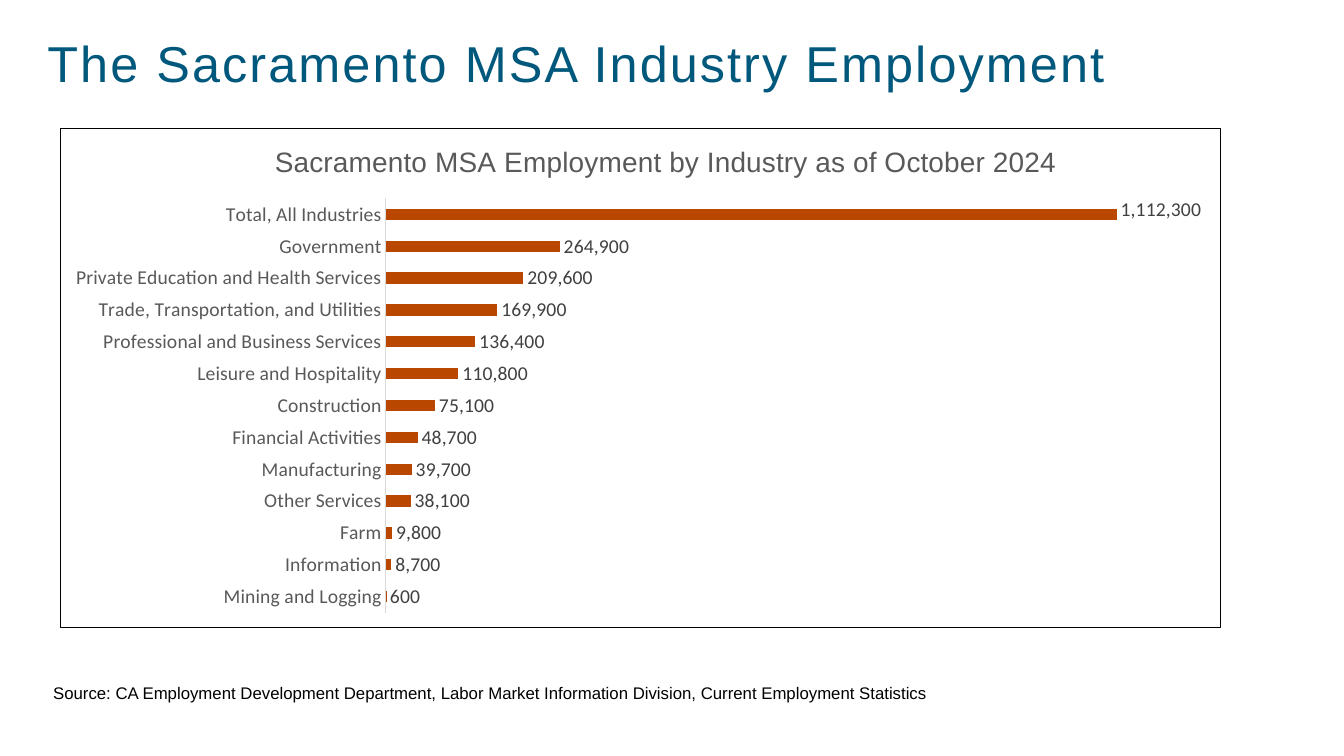
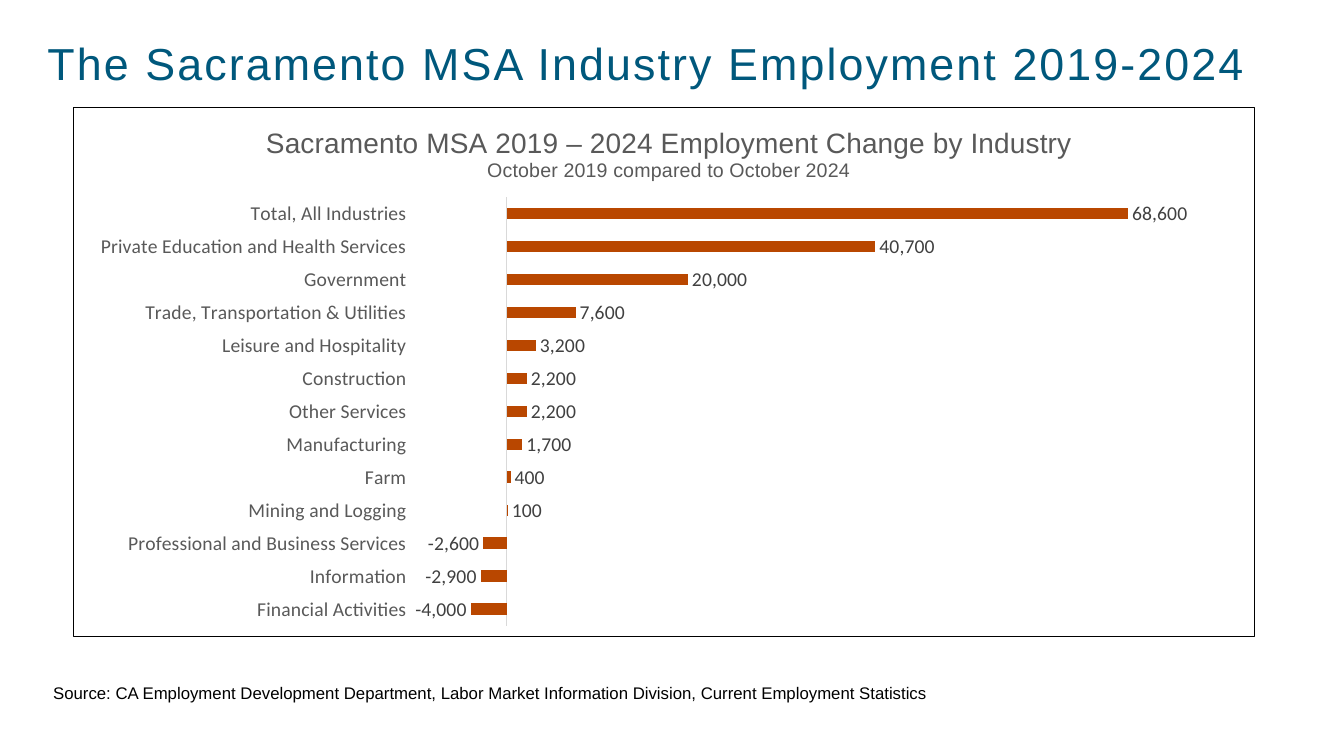
import pptx
import pptx.util
import pptx.chart.data
import pptx.dml.color
import pptx.enum.chart
import pptx.enum.text
import pptx.oxml
import pptx.oxml.ns

Cm, Pt = pptx.util.Cm, pptx.util.Pt
qn = pptx.oxml.ns.qn

# Shared look
TEAL, RUST, BLACK = "00587C", "B94700", "000000"
GREY, DARK, PALE = "595959", "404040", "D9D9D9"
NUMBERS = "#,###,###,##0"
SOURCE = ("Source: CA Employment Development Department, Labor Market "
          "Information Division, Current Employment Statistics")

# Content: boxes in cm, layouts as fractions of the chart, bars top to bottom
SLIDES = [
    dict(
        title="The Sacramento MSA Industry Employment", title_size=36,
        box=(1.52, 3.23, 29.26, 12.6),
        heading=[("Sacramento MSA Employment by Industry as of October 2024", 20)],
        heading_at=(0.18, 0.02),
        plot=(0.28, 0.14, 0.68, 0.83),
        scale=(0, 1200000), labels_low=False, raised=0.01,
        bars=[
            ("Total, All Industries", 1112300),
            ("Government", 264900),
            ("Private Education and Health Services", 209600),
            ("Trade, Transportation, and Utilities", 169900),
            ("Professional and Business Services", 136400),
            ("Leisure and Hospitality", 110800),
            ("Construction", 75100),
            ("Financial Activities", 48700),
            ("Manufacturing", 39700),
            ("Other Services", 38100),
            ("Farm", 9800),
            ("Information", 8700),
            ("Mining and Logging", 600),
        ]),
    dict(
        title="The Sacramento MSA Industry Employment 2019-2024", title_size=32,
        box=(1.85, 2.69, 29.79, 13.36),
        heading=[("Sacramento MSA 2019 – 2024 Employment Change by Industry", 20),
                 ("October 2019 compared to October 2024", 14)],
        heading_at=(0.16, 0.03),
        plot=(0.29, 0.17, 0.69, 0.81),
        scale=(-10000, 80000), labels_low=True, raised=0,
        bars=[
            ("Total, All Industries", 68600),
            ("Private Education and Health Services", 40700),
            ("Government", 20000),
            ("Trade, Transportation & Utilities", 7600),
            ("Leisure and Hospitality", 3200),
            ("Construction", 2200),
            ("Other Services", 2200),
            ("Manufacturing", 1700),
            ("Farm", 400),
            ("Mining and Logging", 100),
            ("Professional and Business Services", -2600),
            ("Information", -2900),
            ("Financial Activities", -4000),
        ]),
]


def rgb(value):
    return pptx.dml.color.RGBColor.from_string(value)


def style(font, size, color, name="Calibri"):
    font.size, font.name, font.bold = Pt(size), name, False
    font.color.rgb = rgb(color)


def write(tf, text, size=12, color=BLACK, spacing=0, align=None, new=False):
    p = tf.add_paragraph() if new else tf.paragraphs[0]
    p.alignment = align
    r = p.add_run()
    r.text = text
    style(r.font, size, color, "Arial")
    if spacing:
        r._r.get_or_add_rPr().set("spc", str(round(spacing * 100)))


def chart_xml(tag, body):
    return pptx.oxml.parse_xml(
        f'<c:{tag} {pptx.oxml.ns.nsdecls("c", "a")}>{body}</c:{tag}>')


def place(parent, index, edge=True, inner=False, **fractions):
    """Give a chart part a manual layout."""
    for old in parent.findall(qn("c:layout")):
        parent.remove(old)
    body = '<c:layoutTarget val="inner"/>' if inner else ""
    if edge:
        body += '<c:xMode val="edge"/><c:yMode val="edge"/>'
    body += "".join(f'<c:{k} val="{v}"/>' for k, v in fractions.items())
    parent.insert(index, chart_xml(
        "layout", f"<c:manualLayout>{body}</c:manualLayout>"))


def add_bar_chart(s, spec_):
    bars = spec_["bars"][::-1]
    data = pptx.chart.data.CategoryChartData(number_format=NUMBERS)
    data.categories = [name for name, _ in bars]
    data.add_series("Series 1", [value for _, value in bars])
    chart = s.shapes.add_chart(
        pptx.enum.chart.XL_CHART_TYPE.BAR_CLUSTERED,
        *(Cm(v) for v in spec_["box"]), data).chart
    chart.has_legend = False
    style(chart.font, 10, BLACK)

    # Frame
    space = chart._chartSpace
    space.find(qn("c:txPr")).addprevious(chart_xml(
        "spPr", '<a:noFill/><a:ln w="9525"><a:solidFill>'
        f'<a:srgbClr val="{BLACK}"/></a:solidFill></a:ln>'))

    # Heading and plot area
    tf = chart.chart_title.text_frame
    for i, (line, size) in enumerate(spec_["heading"]):
        write(tf, line, size=size, color=GREY, new=i > 0,
              align=pptx.enum.text.PP_ALIGN.CENTER)
    place(space.find(".//" + qn("c:title")), 1,
          **dict(zip("xy", spec_["heading_at"])))
    place(space.find(".//" + qn("c:plotArea")), 0, inner=True,
          **dict(zip("xywh", spec_["plot"])))

    # Axes
    axis = chart.category_axis
    axis.has_major_gridlines = False
    axis.major_tick_mark = pptx.enum.chart.XL_TICK_MARK.NONE
    axis.format.line.color.rgb = rgb(PALE)
    axis.format.line.width = Pt(0.75)
    style(axis.tick_labels.font, 14, GREY)
    if spec_["labels_low"]:
        axis.tick_label_position = pptx.enum.chart.XL_TICK_LABEL_POSITION.LOW
    values = chart.value_axis
    values.has_major_gridlines = False
    values.visible = False
    values.minimum_scale, values.maximum_scale = spec_["scale"]

    # Bars and their labels
    plot = chart.plots[0]
    plot.gap_width = 182
    plot.vary_by_categories = False
    series = plot.series[0]
    series.invert_if_negative = False
    series.format.fill.solid()
    series.format.fill.fore_color.rgb = rgb(RUST)
    outside = pptx.enum.chart.XL_LABEL_POSITION.OUTSIDE_END
    labels = series.data_labels
    labels.show_value = True
    labels.number_format = NUMBERS
    labels.number_format_is_linked = False
    labels.position = outside
    style(labels.font, 14, DARK)
    if spec_["raised"]:
        top = series.points[len(bars) - 1].data_label
        style(top.font, 14, DARK)
        top.position = outside
        place(series._element.find(".//" + qn("c:dLbl")), 1, edge=False,
              x=0, y=-spec_["raised"])


def main():
    prs = pptx.Presentation()
    prs.slide_width, prs.slide_height = Cm(33.87), Cm(19.05)
    for item in SLIDES:
        s = prs.slides.add_slide(prs.slide_layouts[5])

        # Title
        sp = s.shapes.title
        sp.left, sp.top, sp.width, sp.height = Cm(0.94), Cm(0.46), Cm(32.36), Cm(2.24)
        sp.text_frame.vertical_anchor = pptx.enum.text.MSO_ANCHOR.MIDDLE
        write(sp.text_frame, item["title"], size=item["title_size"], color=TEAL,
              spacing=1.5, align=pptx.enum.text.PP_ALIGN.LEFT)

        add_bar_chart(s, item)

        # Source line
        tf = s.shapes.add_textbox(Cm(1.09), Cm(17.09), Cm(22.78), Cm(0.77)).text_frame
        tf.word_wrap = True
        tf.auto_size = pptx.enum.text.MSO_AUTO_SIZE.SHAPE_TO_FIT_TEXT
        write(tf, SOURCE)
    prs.save("out.pptx")


if __name__ == "__main__":
    main()
